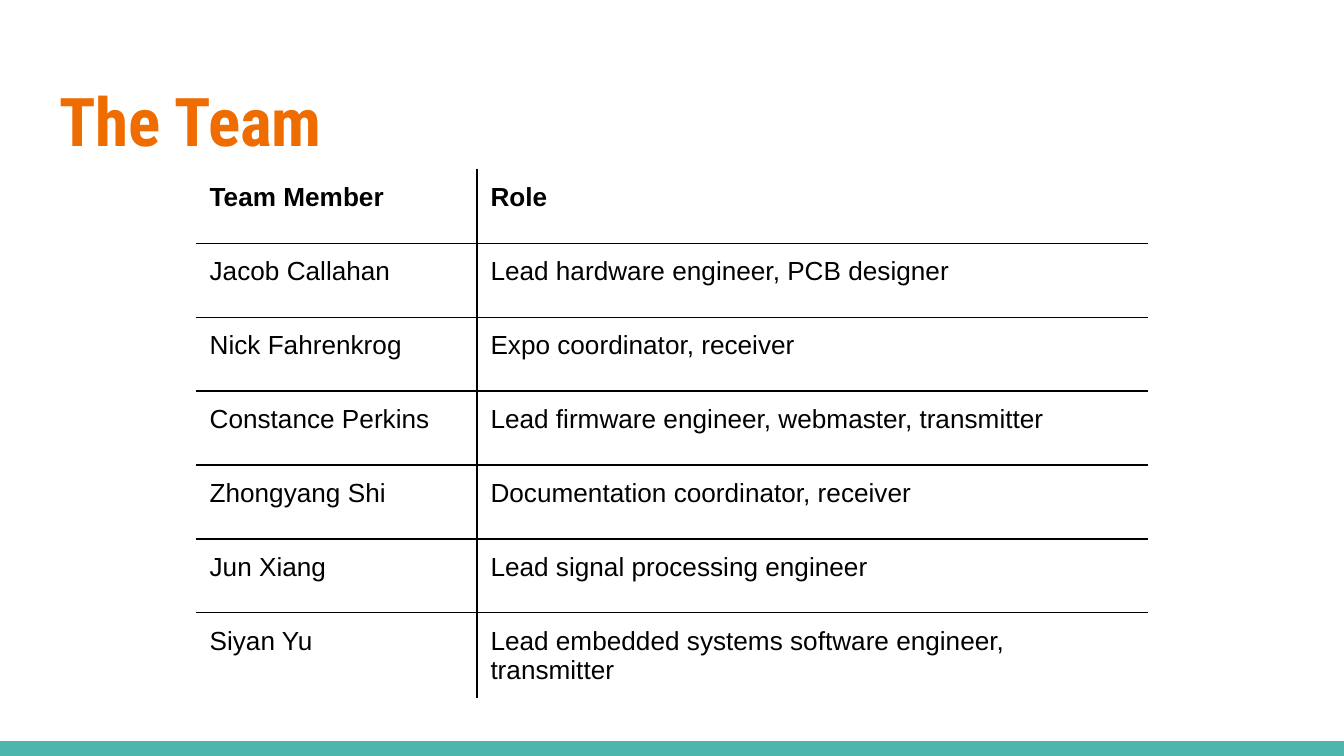
from lxml import etree
from pptx import Presentation, util as u
from pptx.dml.color import RGBColor
from pptx.enum import shapes, text
from pptx.oxml import ns

WIDTH = 10
HEIGHT = WIDTH * 9 / 16
ROW_HEIGHT = 0.55
COLUMN_WIDTHS = [2.09, 4.99]
INSET = u.Inches(0.1)
BLACK, WHITE, ORANGE, TEAL = "000000", "FFFFFF", "EF6C00", "4DB6AC"
TEAM = [
    ("Team Member", "Role"),
    ("Jacob Callahan", "Lead hardware engineer, PCB designer"),
    ("Nick Fahrenkrog", "Expo coordinator, receiver"),
    ("Constance Perkins", "Lead firmware engineer, webmaster, transmitter"),
    ("Zhongyang Shi", "Documentation coordinator, receiver"),
    ("Jun Xiang", "Lead signal processing engineer"),
    ("Siyan Yu", "Lead embedded systems software engineer, transmitter"),
]


def color(value):
    return RGBColor.from_string(value)


def set_font(para, name, size, value, bold):
    font = para.font
    font.name, font.size, font.bold = name, u.Pt(size), bold
    font.color.rgb = color(value)


def set_insets(target):
    target.margin_left = target.margin_right = INSET
    target.margin_top = target.margin_bottom = INSET


def add_footer_bar(page):
    height = 0.11
    bar = page.shapes.add_shape(
        shapes.MSO_SHAPE.RECTANGLE, 0, u.Inches(HEIGHT - height),
        u.Inches(WIDTH), u.Inches(height))
    bar.shadow.inherit = False
    bar.fill.solid()
    bar.fill.fore_color.rgb = color(TEAL)
    bar.line.fill.background()


def set_title(page, words):
    title = page.shapes.title
    title.left, title.top = u.Inches(0.34), u.Inches(0.49)
    title.width, title.height = u.Inches(9.32), u.Inches(0.77)
    frame = title.text_frame
    frame.text = words
    frame.word_wrap = True
    frame.auto_size = text.MSO_AUTO_SIZE.NONE
    frame.vertical_anchor = text.MSO_ANCHOR.TOP
    set_insets(frame)
    para = frame.paragraphs[0]
    para.alignment = text.PP_ALIGN.LEFT
    set_font(para, "Roboto Condensed", 36, ORANGE, True)


def add_border(cell, side, value):
    properties = cell._tc.get_or_add_tcPr()
    line = etree.SubElement(properties, ns.qn(f"a:ln{side}"), w=str(u.Pt(0.75)))
    fill = etree.SubElement(line, ns.qn("a:solidFill"))
    etree.SubElement(fill, ns.qn("a:srgbClr"), val=value)


def format_cell(cell, words, bold, outer_sides):
    cell.text = words
    set_insets(cell)
    cell.vertical_anchor = text.MSO_ANCHOR.TOP
    set_font(cell.text_frame.paragraphs[0], "Arial", 14, BLACK, bold)
    for side in "LRTB":
        add_border(cell, side, WHITE if side in outer_sides else BLACK)
    cell.fill.background()


def add_team_table(page):
    last = len(TEAM) - 1
    table = page.shapes.add_table(
        len(TEAM), len(COLUMN_WIDTHS), u.Inches(1.46), u.Inches(1.26),
        u.Inches(sum(COLUMN_WIDTHS)), u.Inches(ROW_HEIGHT * len(TEAM))).table
    table.first_row = table.horz_banding = False
    for column, width in zip(table.columns, COLUMN_WIDTHS):
        column.width = u.Inches(width)
    for row, member in enumerate(TEAM):
        table.rows[row].height = u.Inches(ROW_HEIGHT)
        edge = {0: "T", last: "B"}.get(row, "")
        for column, words in enumerate(member):
            format_cell(table.cell(row, column), words, row == 0,
                        "LR"[column] + edge)


def main():
    deck = Presentation()
    deck.slide_width, deck.slide_height = u.Inches(WIDTH), u.Inches(HEIGHT)
    page = deck.slides.add_slide(deck.slide_layouts.get_by_name("Title Only"))
    page.background.fill.solid()
    page.background.fill.fore_color.rgb = color(WHITE)
    add_footer_bar(page)
    set_title(page, "The Team")
    add_team_table(page)
    deck.save("out.pptx")


if __name__ == "__main__":
    main()
